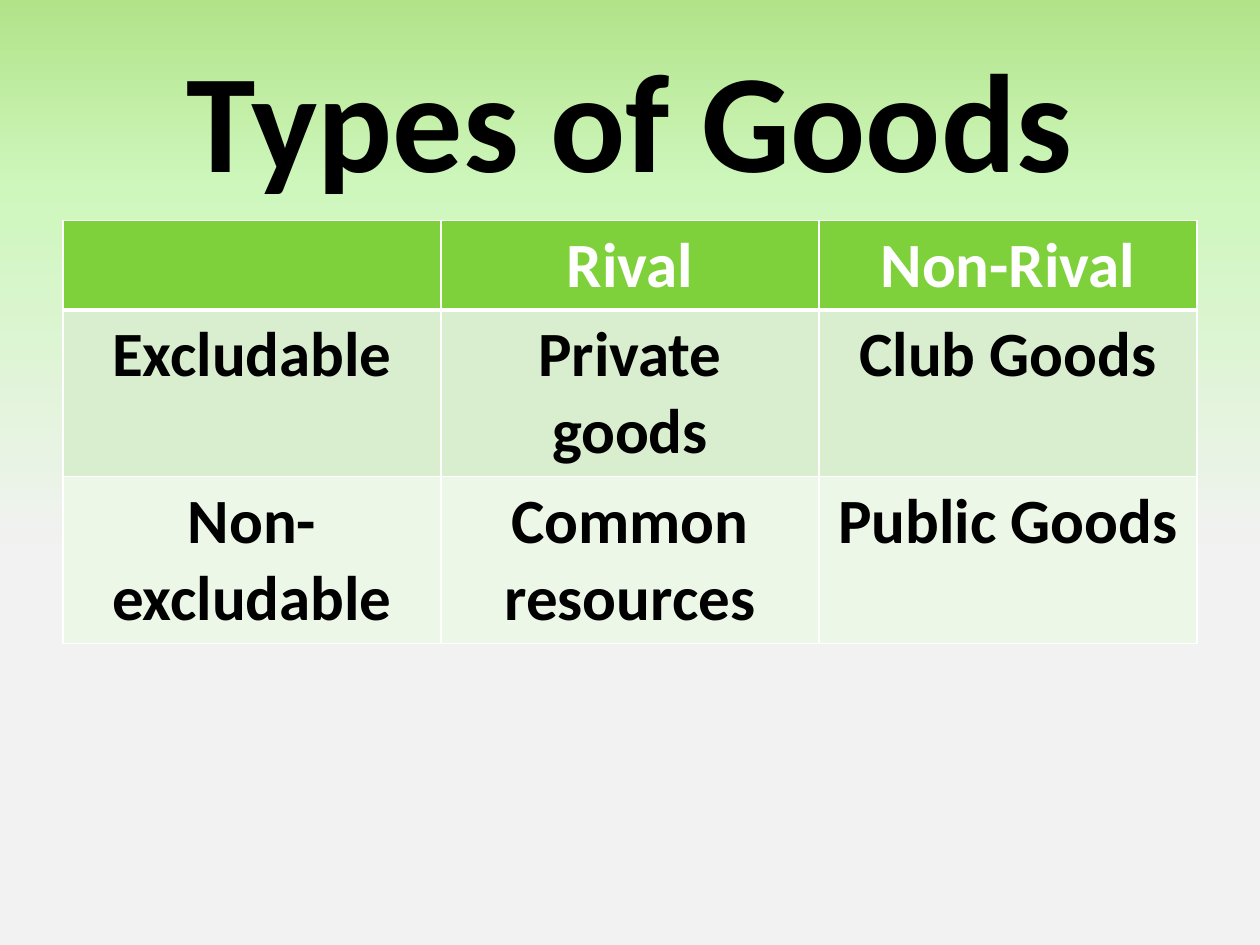
"""Build the "Types of Goods" slide: a title above a table of rival and excludable goods."""
from lxml import etree
from pptx import Presentation
from pptx.dml.color import RGBColor
from pptx.enum.text import MSO_ANCHOR, PP_ALIGN
from pptx.oxml.ns import qn
from pptx.util import Cm, Pt

CENTER = PP_ALIGN.CENTER
MIDDLE = MSO_ANCHOR.MIDDLE

TITLE = "Types of Goods"
GOODS = [
    ["", "Rival", "Non-Rival"],
    ["Excludable", "Private goods", "Club Goods"],
    ["Non-excludable", "Common resources", "Public Goods"],
]
COLOURS = {"text": "000000", "white": "FFFFFF"}
ROW_FILLS = ["7FD13B", "D8EECE", "ECF7E8"]
BACKGROUND_STOPS = [(0, "B2E389"), (20, "CEF7BD"), (59, "F2F2F2")]
ROW_HEIGHTS = [1.8, 3.36, 3.36]
LEFT, WIDTH = 1.27, 22.86
TITLE_FORMAT = {"name": "Calibri", "size": Pt(80), "bold": True}
CELL_FORMAT = {"name": "Calibri", "size": Pt(36), "bold": True}


def paint_background(page):
    fill = page.background.fill
    fill.gradient()
    fill.gradient_angle = 270
    stops = page.background._cSld.find(".//" + qn("a:gsLst"))
    for stop in list(stops):
        stops.remove(stop)
    for percent, colour in BACKGROUND_STOPS:
        stop = etree.SubElement(stops, qn("a:gs"), pos=str(percent * 1000))
        etree.SubElement(stop, qn("a:srgbClr"), val=colour)


def write(frame, text, colour, formats):
    para = frame.paragraphs[0]
    para.alignment = CENTER
    span = para.add_run() if text else para
    if text:
        span.text = text
    for name, value in formats.items():
        setattr(span.font, name, value)
    span.font.color.rgb = RGBColor.from_string(colour)


def add_borders(cell, widths):
    properties = cell._tc.get_or_add_tcPr()
    for side, points in widths.items():
        line = etree.SubElement(properties, qn("a:ln" + side), w=str(Pt(points)))
        solid = etree.SubElement(line, qn("a:solidFill"))
        etree.SubElement(solid, qn("a:srgbClr"), val=COLOURS["white"])


def add_title(page):
    box = page.shapes.add_textbox(Cm(LEFT), Cm(0.76), Cm(WIDTH), Cm(3.18))
    box.text_frame.word_wrap = True
    box.text_frame.vertical_anchor = MIDDLE
    write(box.text_frame, TITLE, COLOURS["text"], TITLE_FORMAT)


def add_goods_table(page):
    table = page.shapes.add_table(
        len(GOODS), len(GOODS[0]), Cm(LEFT), Cm(4.45), Cm(WIDTH), Cm(sum(ROW_HEIGHTS))
    ).table
    for row, texts in enumerate(GOODS):
        table.rows[row].height = Cm(ROW_HEIGHTS[row])
        colour = COLOURS["text" if row else "white"]
        widths = {"L": 1, "R": 1, "T": 3 if row == 1 else 1, "B": 1 if row else 3}
        for column, text in enumerate(texts):
            cell = table.cell(row, column)
            add_borders(cell, widths)
            cell.fill.solid()
            cell.fill.fore_color.rgb = RGBColor.from_string(ROW_FILLS[row])
            write(cell.text_frame, text, colour, CELL_FORMAT)


def main():
    deck = Presentation()
    deck.slide_width, deck.slide_height = Cm(25.4), Cm(19.05)
    page = deck.slides.add_slide(deck.slide_layouts[6])
    paint_background(page)
    add_title(page)
    add_goods_table(page)
    deck.save("out.pptx")


if __name__ == "__main__":
    main()
